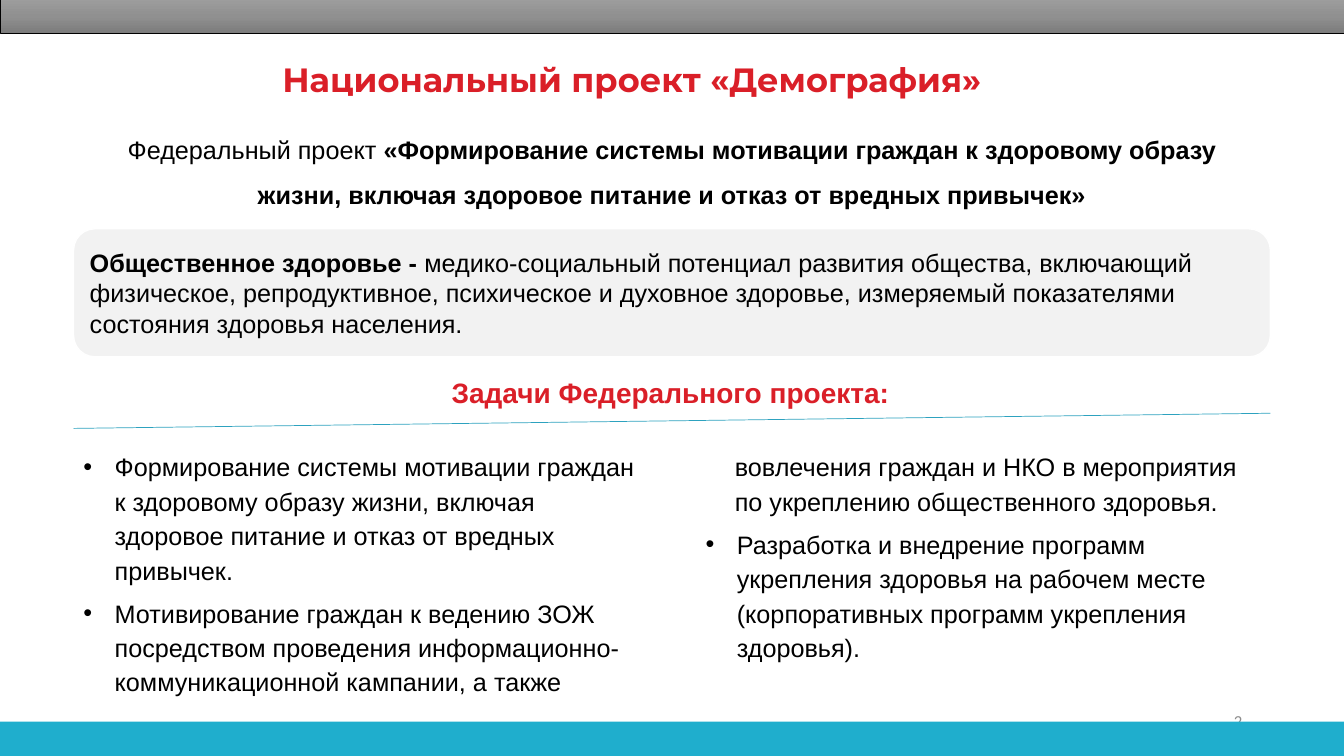
import copy
from lxml import etree
from pptx import Presentation, util as u
from pptx.dml.color import RGBColor
from pptx.enum import shapes, text
from pptx.oxml.ns import qn

W, H = 13.33, 7.5
MARGIN = 0.73
CONTENT_W = W - 2 * MARGIN
COLUMN_W = 5.7
BAND_H = 0.34

COLORS = {
    "red": "DA1F28", "black": "000000", "white": "FFFFFF", "panel": "F2F2F2",
    "footer": "1FAECD", "rule": "2DA2BF", "number": "8C8C8C",
}
HEADER_STOPS = [(0, "9D9D9D"), (0.5, "909090"), (1, "7C7C7C")]

TITLE = "Национальный проект «Демография»"
PROJECT = [
    ("Федеральный проект ", False),
    ("«Формирование системы мотивации граждан к здоровому образу жизни, "
     "включая здоровое питание и отказ от вредных привычек»", True),
]
DEFINITION = [
    ("Общественное здоровье - ", True),
    ("медико-социальный потенциал развития общества, включающий физическое, "
     "репродуктивное, психическое и духовное здоровье, измеряемый показателями "
     "состояния здоровья населения.", False),
]
TASKS_HEADING = "Задачи Федерального проекта:"
TASK_COLUMNS = [
    (2.57, [
        (True, "Формирование системы мотивации граждан к здоровому образу жизни, "
               "включая здоровое питание и отказ от вредных привычек."),
        (True, "Мотивирование граждан к ведению ЗОЖ посредством проведения "
               "информационно-коммуникационной кампании, а также"),
    ]),
    (2.23, [
        (False, "вовлечения граждан и НКО в мероприятия по укреплению "
                "общественного здоровья."),
        (True, "Разработка и внедрение программ укрепления здоровья на рабочем "
               "месте (корпоративных программ укрепления здоровья)."),
    ]),
]
PAGE_NUMBER = "2"


def rgb(name):
    return RGBColor.from_string(COLORS[name])


def place(sp, *box):
    sp.left, sp.top, sp.width, sp.height = map(u.Inches, box)


def style(p, size=18, color="black", font="Arial", bold=None):
    p.font.size, p.font.name, p.font.bold = u.Pt(size), font, bold
    p.font.color.rgb = rgb(color)


def add_text(s, box, wrap=True):
    sp = s.shapes.add_textbox(*map(u.Inches, box))
    sp.text_frame.word_wrap = wrap
    return sp.text_frame


def add_box(s, kind, *box):
    sp = s.shapes.add_shape(kind, *map(u.Inches, box))
    sp.shadow.inherit = False
    return sp


def add_runs(p, runs):
    style(p)
    for words, bold in runs:
        r = p.add_run()
        r.text, r.font.bold = words, bold


def indent(p, bullet):
    pPr = p._p.get_or_add_pPr()
    pPr.set("marL", str(u.Inches(0.31 if bullet else 0.29)))
    pPr.set("indent", str(u.Inches(-0.31 if bullet else 0)))
    if bullet:
        font = etree.Element(qn("a:buFont"), typeface="Arial")
        char = etree.Element(qn("a:buChar"), char="•")
        pPr.insert_element_before(font, "a:buChar", "a:defRPr")
        pPr.insert_element_before(char, "a:defRPr")


def add_header(s):
    sp = add_box(s, shapes.MSO_SHAPE.RECTANGLE, 0, -0.01, W, BAND_H)
    sp.fill.gradient()
    sp.fill.gradient_angle = 270
    stops = sp._element.spPr.find(".//" + qn("a:gsLst"))
    stops.insert(1, copy.deepcopy(stops[0]))
    for stop, (position, color) in zip(sp.fill.gradient_stops, HEADER_STOPS):
        stop.position = position
        stop.color.rgb = RGBColor.from_string(color)
    sp.line.color.rgb = rgb("black")
    sp.line.width = u.Pt(0.5)


def add_footer(s):
    sp = add_box(s, shapes.MSO_SHAPE.RECTANGLE, 0, H - BAND_H, W, BAND_H)
    sp.fill.solid()
    sp.fill.fore_color.rgb = rgb("footer")
    sp.line.fill.background()


def add_definition(s):
    sp = add_box(s, shapes.MSO_SHAPE.ROUNDED_RECTANGLE, MARGIN, 2.27, CONTENT_W, 1.27)
    sp.fill.solid()
    sp.fill.fore_color.rgb = rgb("panel")
    sp.line.color.rgb = rgb("white")
    sp.line.width = u.Pt(1)
    tf = sp.text_frame
    tf.word_wrap = True
    tf.vertical_anchor = text.MSO_ANCHOR.MIDDLE
    p = tf.paragraphs[0]
    p.alignment = text.PP_ALIGN.LEFT
    add_runs(p, DEFINITION)


def add_rule(s):
    ends = map(u.Inches, (MARGIN, 4.25, MARGIN + CONTENT_W, 4.1))
    line = s.shapes.add_connector(shapes.MSO_CONNECTOR.STRAIGHT, *ends)
    line.line.color.rgb = rgb("rule")
    line.line.width = u.Pt(0.5)
    etree.SubElement(line._element.spPr, qn("a:effectLst"))


def add_tasks(s):
    lefts = (MARGIN, W - MARGIN - COLUMN_W)
    for left, (height, tasks) in zip(lefts, TASK_COLUMNS):
        tf = add_text(s, (left, 4.39, COLUMN_W, height))
        for i, (bullet, words) in enumerate(tasks):
            p = tf.add_paragraph() if i else tf.paragraphs[0]
            p.text = words
            p.line_spacing = 1.14
            if i < len(tasks) - 1:
                p.space_after = u.Pt(6)
            style(p)
            indent(p, bullet)


def main():
    prs = Presentation()
    prs.slide_width, prs.slide_height = u.Inches(W), u.Inches(H)
    s = prs.slides.add_slide(prs.slide_layouts[5])

    tf = add_text(s, (9.42, 6.95, 3, 0.4))
    tf.vertical_anchor = text.MSO_ANCHOR.MIDDLE
    p = tf.paragraphs[0]
    p.text, p.alignment = PAGE_NUMBER, text.PP_ALIGN.RIGHT
    style(p, 12, "number", "Calibri")

    add_header(s)
    add_footer(s)
    add_definition(s)

    title = s.shapes.title
    place(title, 2.7, 0.53, 7.48, 0.5)
    tf = title.text_frame
    tf.word_wrap, tf.auto_size = False, text.MSO_AUTO_SIZE.NONE
    tf.vertical_anchor = text.MSO_ANCHOR.TOP
    p = tf.paragraphs[0]
    p.text, p.alignment = TITLE, text.PP_ALIGN.LEFT
    style(p, 24, "red", "Montserrat", True)

    p = add_text(s, (MARGIN, 1.13, CONTENT_W, 0.95)).paragraphs[0]
    p.alignment, p.line_spacing = text.PP_ALIGN.CENTER, 1.5
    add_runs(p, PROJECT)

    add_rule(s)
    p = add_text(s, (4.38, 3.68, 4.58, 0.44), wrap=False).paragraphs[0]
    p.text = TASKS_HEADING
    style(p, 20, "red", bold=True)
    add_tasks(s)

    prs.save("out.pptx")


if __name__ == "__main__":
    main()
